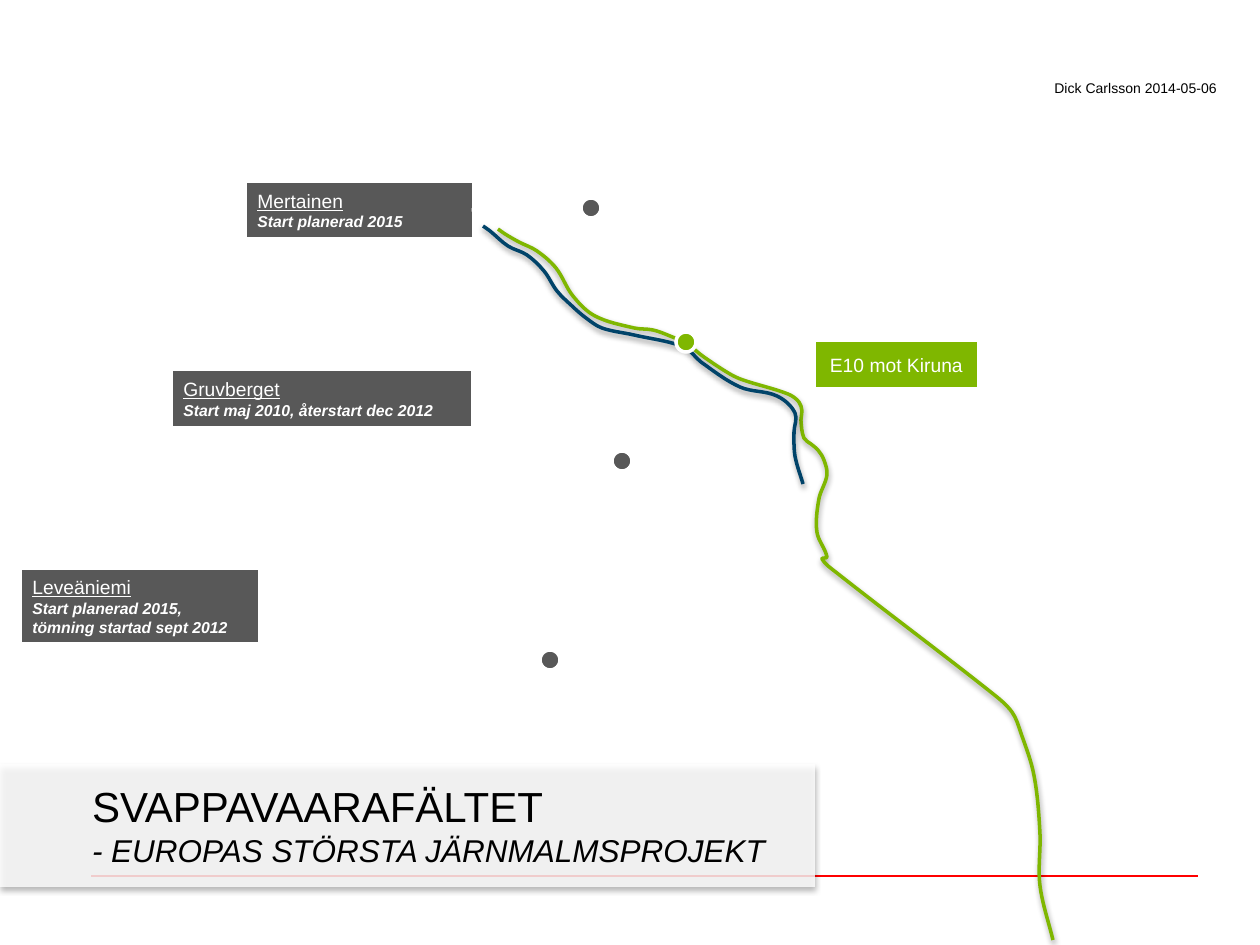
import math
from itertools import pairwise

from lxml import etree
from pptx import Presentation
from pptx.dml.color import RGBColor
from pptx.enum.shapes import MSO_CONNECTOR, MSO_SHAPE
from pptx.enum.text import MSO_ANCHOR, PP_ALIGN
from pptx.oxml.ns import qn
from pptx.util import Emu, Pt

PX = 914400 / 126
TITLE_ONLY = 5
STRAIGHT = MSO_CONNECTOR.STRAIGHT
CALLOUT, DOT, RECT = MSO_SHAPE.LINE_CALLOUT_2, MSO_SHAPE.OVAL, MSO_SHAPE.RECTANGLE
LEFT, CENTER, RIGHT = PP_ALIGN.LEFT, PP_ALIGN.CENTER, PP_ALIGN.RIGHT
MIDDLE, BOTTOM = MSO_ANCHOR.MIDDLE, MSO_ANCHOR.BOTTOM

THEME = {
    "font": "Arial",
    "white": RGBColor(255, 255, 255),
    "black": RGBColor(0, 0, 0),
    "red": RGBColor(255, 0, 0),
    "green": RGBColor.from_string("7FB700"),
    "blue": RGBColor.from_string("004369"),
    "grey": RGBColor.from_string("585858"),
    "title": Pt(24),
    "subtitle": Pt(18),
    "name": Pt(11),
    "detail": Pt(9),
    "credit": Pt(8),
}

ROAD = [
    (1053, 940), (1040, 885), (1040, 832), (1034, 775), (1021, 733), (1012, 712),
    (992, 693), (837, 573), (822, 559), (827, 557), (817, 532),
    (819, 499), (827, 475), (824, 460), (818, 450), (811, 444), (804, 438),
    (801, 420), (802, 411), (799, 402), (788, 394), (743, 380), (730, 374),
    (704, 357), (687, 344), (670, 336), (653, 330), (634, 328), (595, 316),
    (573, 296), (556, 268), (537, 251), (519, 242), (505, 234), (498, 229),
]
RAILWAY = [
    (803, 484), (795, 456), (794, 432), (795, 413), (777, 396), (740, 387),
    (701, 362), (684, 347), (634, 335), (602, 328), (586, 318), (572, 306),
    (557, 291), (544, 271), (527, 255), (508, 246), (490, 231), (483, 226),
]

# Box, callout line adjustments, name and details of each mine
MINES = [
    ((245, 181, 229, 58), (0.5, 0.99, 0.47, 1.49, 0.5, 1.01),
     "Mertainen", ["Start planerad 2015"]),
    ((171, 369, 302, 59), (0.51, 1, 0.5, 1, 1.55, 1.49),
     "Gruvberget", ["Start maj 2010, återstart dec 2012"]),
    ((20, 568, 240, 76), (0.49, 1, 0.49, 1, 1.19, 2.18),
     "Leveäniemi", ["Start planerad 2015,", "tömning startad sept 2012"]),
]
MINE_DOTS = [(591, 208), (622, 461), (550, 660)]
JUNCTION = (686, 342)


def px(*lengths):
    return [Emu(round(length * PX)) for length in lengths]


def add_span(para, text, size, color="white", **styles):
    span = para.add_run()
    span.text = text
    values = {"name": THEME["font"], "size": THEME[size], **styles}
    for key, value in values.items():
        setattr(span.font, key, value)
    span.font.color.rgb = THEME[color]


def set_frame(frame, anchor, inset=None):
    values = {"word_wrap": True, "vertical_anchor": anchor}
    if inset is not None:
        sides = ("left", "right", "top", "bottom")
        values.update({f"margin_{side}": inset for side in sides})
    for key, value in values.items():
        setattr(frame, key, value)


def set_line(shape, color, width):
    shape.line.color.rgb = THEME[color]
    shape.line.width = Pt(width)


def add_soft_shadow(shape, opacity):
    shape.shadow.inherit = False
    effects = shape._element.spPr.find(qn("a:effectLst"))
    shadow = etree.SubElement(effects, qn("a:outerShdw"), blurRad="40000",
                              dist="20000", dir="5400000", rotWithShape="0")
    color = etree.SubElement(shadow, qn("a:srgbClr"), val="000000")
    etree.SubElement(color, qn("a:alpha"), val=str(opacity * 1000))


def add_block(page, kind, box, fill):
    """Add a filled preset shape with a white outline."""
    block = page.shapes.add_shape(kind, *px(*box))
    block.shadow.inherit = False
    block.fill.solid()
    block.fill.fore_color.rgb = THEME[fill]
    set_line(block, "white", 2)
    return block


def add_dot(page, center, fill, size=20):
    x, y = center
    add_block(page, DOT, (x - size / 2, y - size / 2, size, size), fill)


def add_callout(page, box, adjustments, fill, align):
    """Return the first paragraph and the frame of a new callout."""
    callout = add_block(page, CALLOUT, box, fill)
    for index, value in enumerate(adjustments):
        callout.adjustments[index] = value
    frame = callout.text_frame
    set_frame(frame, MIDDLE)
    frame.paragraphs[0].alignment = align
    return frame.paragraphs[0], frame


def add_mine(page, box, adjustments, name, details):
    para, frame = add_callout(page, box, adjustments, "grey", LEFT)
    add_span(para, name, "name", underline=True)
    for detail in details:
        para = frame.add_paragraph()
        para.alignment = LEFT
        add_span(para, detail, "detail", bold=True, italic=True)


def curve_handles(points):
    """Give each step two handles along the route, a third of the step long."""
    ends = [points[0], *points, points[-1]]
    headings = [math.atan2(after[1] - before[1], after[0] - before[0])
                for before, after in zip(ends, ends[2:])]
    for (start, turn_out), (end, turn_in) in pairwise(zip(points, headings)):
        reach = math.dist(start, end) / 3
        yield ((start[0] + reach * math.cos(turn_out), start[1] + reach * math.sin(turn_out)),
               (end[0] - reach * math.cos(turn_in), end[1] - reach * math.sin(turn_in)))


def bend(route, points):
    """Turn the straight steps of a freeform into smooth curves."""
    steps = list(route._element.iter(qn("a:lnTo")))
    for step, handles in zip(steps, curve_handles(points)):
        curve = etree.Element(qn("a:cubicBezTo"))
        for handle in handles:
            x, y = px(*handle)
            etree.SubElement(curve, qn("a:pt"), x=str(x - route.left), y=str(y - route.top))
        curve.append(step[0])
        step.getparent().replace(step, curve)


def add_route(page, points, color):
    start, *rest = [px(*point) for point in points]
    builder = page.shapes.build_freeform(*start)
    builder.add_line_segments(rest, close=False)
    route = builder.convert_to_shape()
    bend(route, points)
    route.fill.background()
    set_line(route, color, 2)
    add_soft_shadow(route, 38)


def add_rule(page):
    rule = page.shapes.add_connector(STRAIGHT, *px(91, 876, 1198, 876))
    set_line(rule, "red", 1)
    etree.SubElement(rule._element.spPr, qn("a:effectLst"))


def add_title_panel(page):
    panel = page.shapes.add_shape(RECT, *px(0, 764, 815, 123))
    panel.fill.solid()
    panel.fill.fore_color.rgb = THEME["white"]
    color = panel._element.spPr.find(qn("a:solidFill"))[0]
    etree.SubElement(color, qn("a:alpha"), val="80000")
    panel.line.fill.background()
    add_soft_shadow(panel, 35)


def set_title(page):
    title = page.shapes.title
    title.left, title.top, title.width, title.height = px(92, 774, 725, 95)
    page.shapes._spTree.append(title._element)
    set_frame(title.text_frame, BOTTOM, 0)
    para = title.text_frame.paragraphs[0]
    para.alignment = LEFT
    add_span(para, "SVAPPAVAARAFÄLTET", "title", "black")
    para.add_line_break()
    add_span(para, "- EUROPAS STÖRSTA JÄRNMALMSPROJEKT", "subtitle", "black", italic=True)


def add_credit(page):
    box = page.shapes.add_textbox(*px(820, 80, 397, 15))
    set_frame(box.text_frame, MIDDLE, 0)
    para = box.text_frame.paragraphs[0]
    para.alignment = RIGHT
    add_span(para, "Dick Carlsson 2014-05-06", "credit", "black")


def main():
    deck = Presentation()
    deck.slide_width, deck.slide_height = px(1260, 945)
    page = deck.slides.add_slide(deck.slide_layouts[TITLE_ONLY])
    add_rule(page)
    add_route(page, ROAD, "green")
    add_route(page, RAILWAY, "blue")
    para, _ = add_callout(page, (814, 340, 165, 49), (0.51, 0, 0.5, 0, -0.01, -0.74),
                          "green", CENTER)
    add_span(para, "E10 mot Kiruna", "name")
    add_dot(page, JUNCTION, "green")
    for mine, dot in zip(MINES, MINE_DOTS):
        add_mine(page, *mine)
        add_dot(page, dot, "grey")
    add_title_panel(page)
    set_title(page)
    add_credit(page)
    deck.save("out.pptx")


if __name__ == "__main__":
    main()
